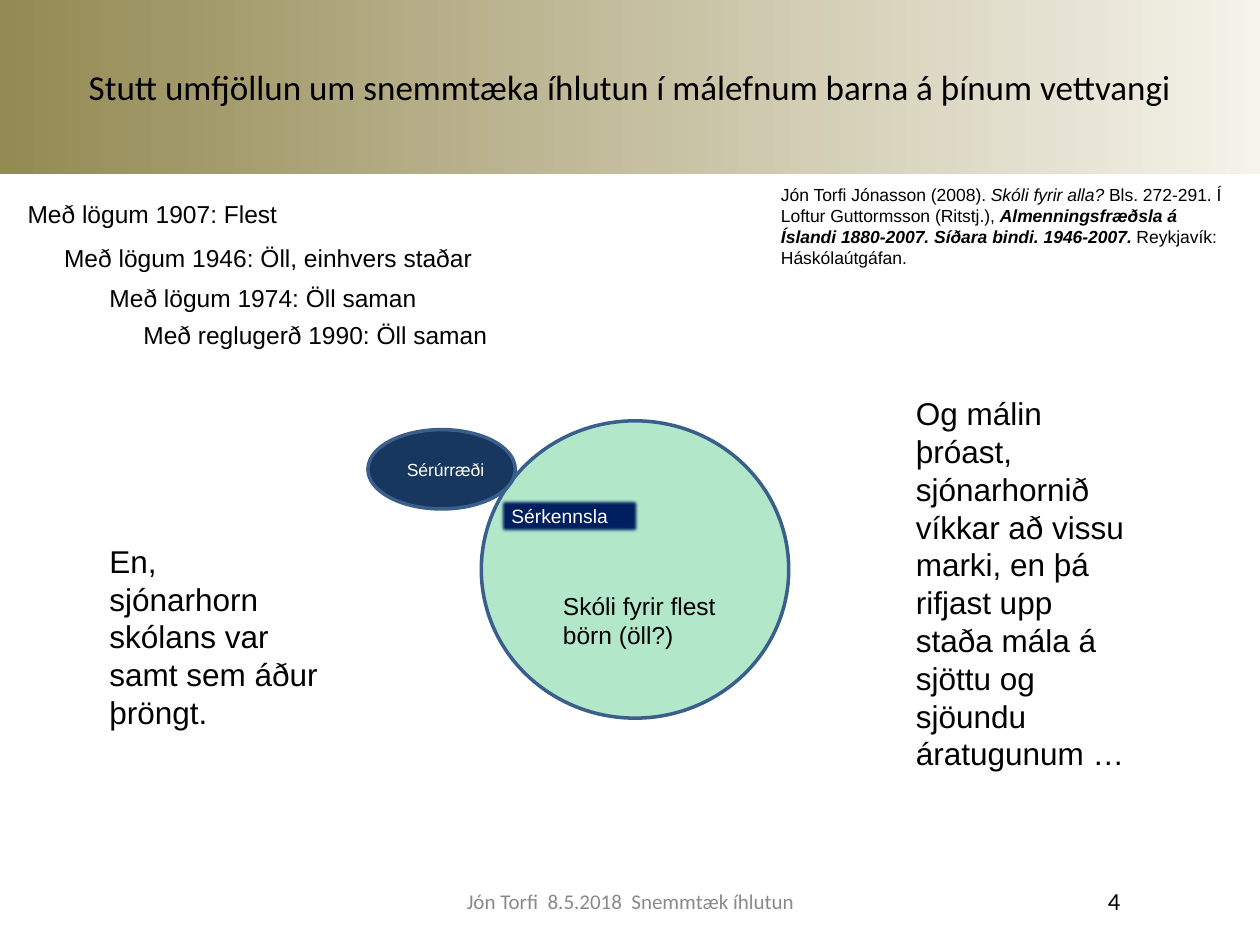
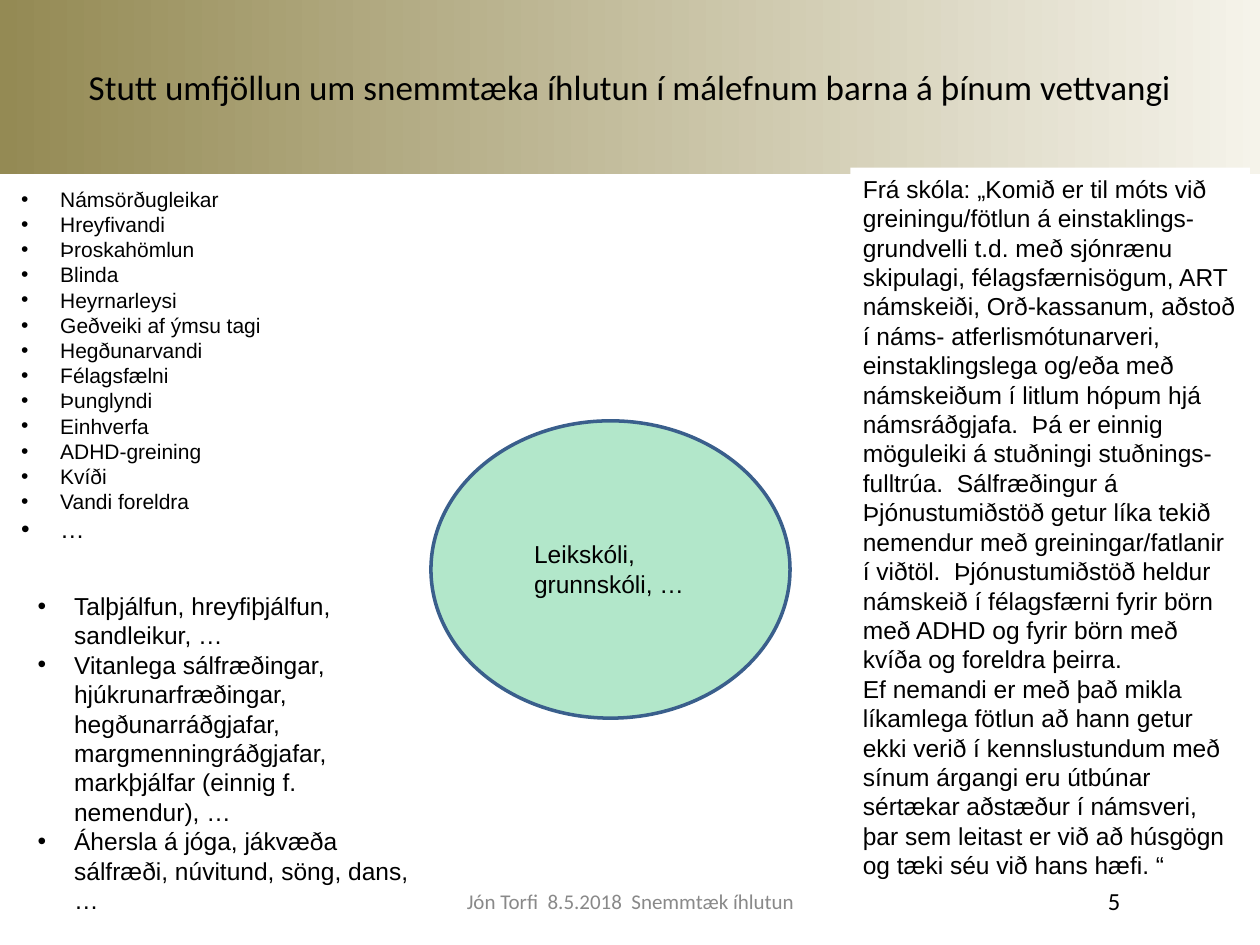
from pptx import Presentation
from pptx.dml.color import RGBColor
from pptx.enum.shapes import MSO_SHAPE
from pptx.enum.text import MSO_ANCHOR, PP_ALIGN
from pptx.oxml.ns import qn
from pptx.util import Pt
from lxml.etree import SubElement

PX = 9144
BLACK, WHITE, GREY = "000000", "FFFFFF", "898989"
OUTLINE, GREEN, NAVY, INDIGO = "3A5F8C", "00B050", "17375E", "002060"
BAND = ("948A54", "F5F3EA")
TITLE = "Stutt umfjöllun um snemmtæka íhlutun í málefnum barna á þínum vettvangi"
FOOTER = "Jón Torfi  8.5.2018  Snemmtæk íhlutun"


def rgb(color):
    return RGBColor.from_string(color)


class Deck:
    body, heading = "Arial", "Calibri"

    def __init__(self):
        self.prs = Presentation()
        self.prs.slide_width, self.prs.slide_height = 1000 * PX, 750 * PX
        self.s = None

    def slide(self, number):
        self.s = self.prs.slides.add_slide(self.prs.slide_layouts[6])
        band = self.shape((0, 0, 1000, 138), MSO_SHAPE.RECTANGLE)
        band.fill.gradient()
        band.fill.gradient_angle = 0
        for stop, color in zip(band.fill.gradient_stops, BAND):
            stop.color.rgb = rgb(color)
        middle = {"font": self.heading, "anchor": MSO_ANCHOR.MIDDLE}
        self.fill_text(band, [TITLE], 20, align=PP_ALIGN.CENTER, **middle)
        self.text((342, 695, 317, 40), [FOOTER], 12, GREY, align=PP_ALIGN.CENTER, **middle)
        self.text((717, 695, 182, 40), [str(number)], 14, align=PP_ALIGN.RIGHT, **middle)

    def shape(self, box, kind, fill=None, line=None, alpha=None):
        sp = self.s.shapes.add_shape(kind, *(v * PX for v in box))
        sp.shadow.inherit = False
        if fill:
            sp.fill.solid()
            sp.fill.fore_color.rgb = rgb(fill)
        if alpha:
            clr = sp._element.spPr.find(qn("a:solidFill"))[0]
            SubElement(clr, qn("a:alpha")).set("val", str(alpha * 1000))
        if line:
            sp.line.color.rgb = rgb(line)
            sp.line.width = Pt(2)
        else:
            sp.line.fill.background()
        return sp

    def ellipse(self, box, fill, alpha=None):
        return self.shape(box, MSO_SHAPE.OVAL, fill, OUTLINE, alpha)

    def panel(self, box, fill, paragraphs, size, color=BLACK, **style):
        sp = self.shape(box, MSO_SHAPE.RECTANGLE, fill)
        self.fill_text(sp, paragraphs, size, color, **style)
        return sp

    def text(self, box, paragraphs, size, color=BLACK, **style):
        sp = self.s.shapes.add_textbox(*(v * PX for v in box))
        self.fill_text(sp, paragraphs, size, color, **style)

    def soften(self, sp, radius):
        effects = sp._element.spPr.find(qn("a:effectLst"))
        SubElement(effects, qn("a:softEdge")).set("rad", str(radius * PX))

    def fill_text(self, sp, paragraphs, size, color=BLACK, font=None, align=PP_ALIGN.LEFT,
                  anchor=MSO_ANCHOR.TOP, indent=0, wrap=True):
        tf = sp.text_frame
        tf.word_wrap = wrap
        tf.vertical_anchor = anchor
        for i, runs in enumerate(paragraphs):
            p = tf.paragraphs[0] if i == 0 else tf.add_paragraph()
            p.alignment = align
            if indent:
                pPr = p._p.get_or_add_pPr()
                pPr.set("marL", str(indent * PX))
                pPr.set("indent", str(-indent * PX))
                SubElement(pPr, qn("a:buFont")).set("typeface", self.body)
                SubElement(pPr, qn("a:buChar")).set("char", "•")
            for words, look in [(runs, {})] if isinstance(runs, str) else runs:
                r = p.add_run()
                r.text = words
                r.font.name = font or self.body
                r.font.size = Pt(look.get("size", size))
                r.font.bold = look.get("bold", False)
                r.font.italic = look.get("italic", False)
                r.font.color.rgb = rgb(color)


def school_for_all(deck):
    deck.slide(4)
    deck.ellipse((382, 334, 244, 236), GREEN, 30)
    deck.ellipse((292, 341, 117, 63), NAVY)
    deck.text((313, 359, 85, 27), ["Sérúrræði"], 10, WHITE)
    deck.text((437, 464, 157, 57), ["Skóli fyrir flest börn (öll?)"], 14)
    deck.text((610, 141, 370, 77), [[
        ("Jón Torfi Jónasson (2008). ", {}),
        ("Skóli fyrir alla? ", {"italic": True}),
        ("Bls. 272-291. Í Loftur Guttormsson (Ritstj.), ", {}),
        ("Almenningsfræðsla á Íslandi 1880-2007. Síðara bindi. 1946-2007.",
         {"bold": True, "italic": True}),
        (" Reykjavík: Háskólaútgáfan.", {}),
    ]], 10)
    special = deck.panel((396, 395, 112, 29), INDIGO, ["Sérkennsla"], 11, WHITE)
    deck.soften(special, 3)
    for x, y, width, law in (
        (12, 153, 219, "Með lögum 1907: Flest"),
        (41, 188, 345, "Með lögum 1946: Öll, einhvers staðar"),
        (77, 220, 265, "Með lögum 1974: Öll saman"),
        (104, 249, 294, "Með reglugerð 1990: Öll saman"),
    ):
        deck.text((x, y, width, 34), [law], 14, wrap=False)
    deck.text((717, 308, 189, 313), [
        "Og málin þróast, sjónarhornið víkkar að vissu marki, en þá rifjast upp "
        "staða mála á sjöttu og sjöundu áratugunum …"], 18)
    deck.text((77, 425, 189, 162), [
        "En,", "sjónarhorn skólans var samt sem áður þröngt."], 18)


def needs_and_support(deck):
    deck.slide(5)
    needs = [
        "Námsörðugleikar", "Hreyfivandi", "Þroskahömlun", "Blinda", "Heyrnarleysi",
        "Geðveiki af ýmsu tagi", "Hegðunarvandi", "Félagsfælni", "Þunglyndi",
        "Einhverfa", "ADHD-greining", "Kvíði", "Vandi foreldra", [("…", {"size": 14})],
    ]
    deck.text((7, 143, 257, 296), needs, 12, indent=31)
    deck.panel((675, 133, 317, 576), WHITE, [
        "Frá skóla: „Komið er til móts við greiningu/fötlun á einstaklings-grundvelli "
        "t.d. með sjónrænu skipulagi, félagsfærnisögum, ART námskeiði, Orð-kassanum, "
        "aðstoð í náms- atferlismótunarveri, einstaklingslega og/eða með námskeiðum í "
        "litlum hópum hjá námsráðgjafa.  Þá er einnig möguleiki á stuðningi "
        "stuðnings-fulltrúa.  Sálfræðingur á Þjónustumiðstöð getur líka tekið nemendur "
        "með greiningar/fatlanir í viðtöl.  Þjónustumiðstöð heldur námskeið í "
        "félagsfærni fyrir börn með ADHD og fyrir börn með kvíða og foreldra þeirra.",
        "Ef nemandi er með það mikla líkamlega fötlun að hann getur ekki verið í "
        "kennslustundum með sínum árgangi eru útbúnar sértækar aðstæður í námsveri, "
        "þar sem leitast er við að húsgögn og tæki séu við hans hæfi. “",
    ], 14)
    deck.panel((20, 464, 326, 269), WHITE, [
        "Talþjálfun, hreyfiþjálfun, sandleikur, …",
        "Vitanlega sálfræðingar, hjúkrunarfræðingar, hegðunarráðgjafar, "
        "margmenningráðgjafar, markþjálfar (einnig f. nemendur), …",
        "Áhersla á jóga, jákvæða sálfræði, núvitund, söng, dans, …",
    ], 14, indent=29)
    deck.ellipse((342, 334, 285, 236), GREEN, 30)
    deck.text((414, 423, 145, 57), ["Leikskóli, grunnskóli, …"], 14)


def main():
    deck = Deck()
    school_for_all(deck)
    needs_and_support(deck)
    deck.prs.save("out.pptx")


if __name__ == "__main__":
    main()
